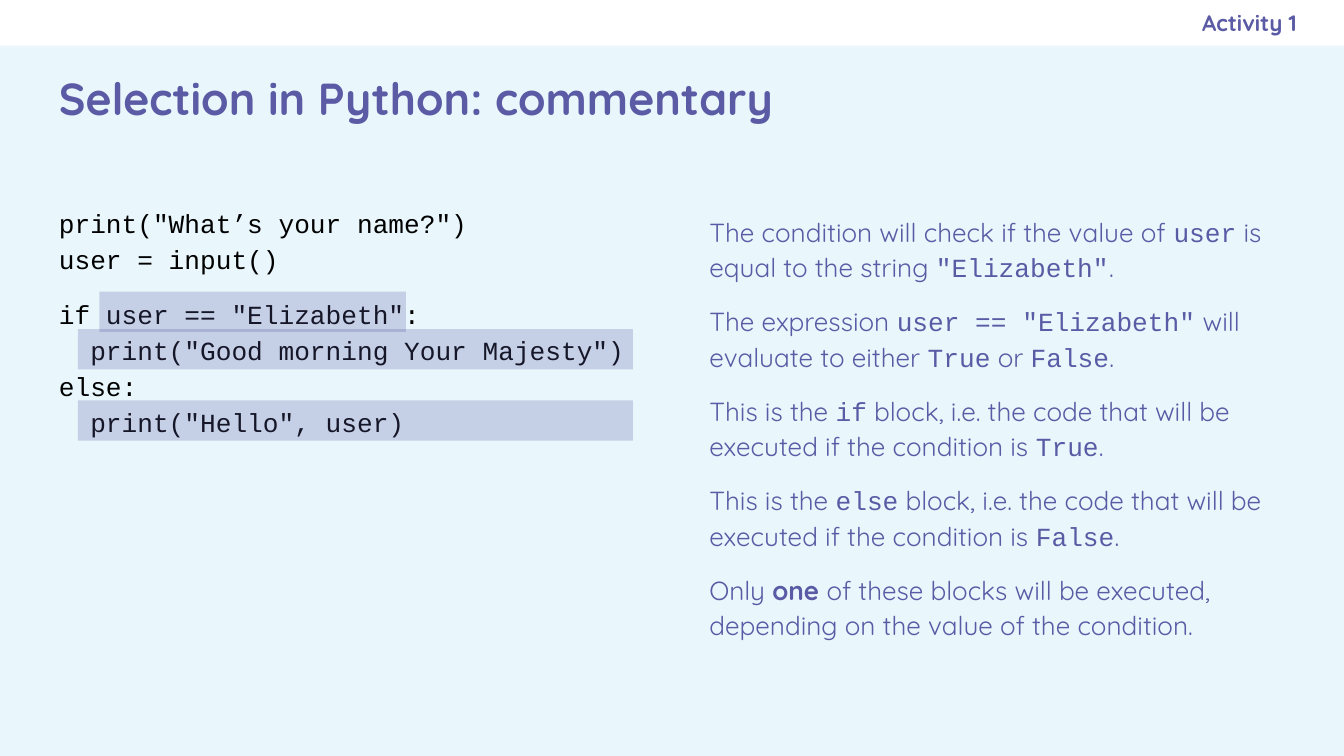
from lxml import etree
from pptx import Presentation
from pptx.dml.color import RGBColor
from pptx.enum.shapes import MSO_SHAPE
from pptx.enum.text import MSO_ANCHOR, PP_ALIGN
from pptx.oxml.ns import qn
from pptx.util import Inches, Pt

RECT = MSO_SHAPE.RECTANGLE
TOP, MIDDLE = MSO_ANCHOR.TOP, MSO_ANCHOR.MIDDLE
LEFT, RIGHT = PP_ALIGN.LEFT, PP_ALIGN.RIGHT
COLORS = {"bg": "E9F7FC", "bar": "FFFFFF", "purple": "5B5BA5", "code": "000000"}
BODY, MONO = "Quicksand", "Courier New"

PLAIN = {"name": BODY, "size": Pt(14), "bold": False}
CODE = {**PLAIN, "name": MONO}
BOLD = {**PLAIN, "bold": True}
HEADING = {**BOLD, "size": Pt(24)}
LABEL = {**BOLD, "size": Pt(12)}


def add_text(box, paragraphs, color="purple", anchor=TOP, align=LEFT, spacing=1.0, right=0.1):
    """Add a text box; each paragraph is a list of (text, font format) runs."""
    tf = s.shapes.add_textbox(*map(Inches, box)).text_frame
    frame = {"word_wrap": True, "vertical_anchor": anchor,
             "margin_left": Inches(0.1), "margin_right": Inches(right),
             "margin_top": Inches(0.1), "margin_bottom": Inches(0.1)}
    for key, value in frame.items():
        setattr(tf, key, value)
    for i, runs in enumerate(paragraphs):
        p = tf.add_paragraph() if i else tf.paragraphs[0]
        p.alignment, p.line_spacing = align, spacing
        for text, font in runs:
            r = p.add_run()
            r.text = text
            for key, value in font.items():
                setattr(r.font, key, value)
            r.font.color.rgb = RGBColor.from_string(COLORS[color])
    return tf


def add_rect(box, color, opacity=100):
    sp = s.shapes.add_shape(RECT, *map(Inches, box))
    sp.shadow.inherit = False
    sp.line.fill.background()
    sp.fill.solid()
    sp.fill.fore_color.rgb = RGBColor.from_string(COLORS[color])
    if opacity < 100:
        clr = sp.fill._xPr.find(".//" + qn("a:srgbClr"))
        etree.SubElement(clr, qn("a:alpha"), val=str(opacity * 1000))


prs = Presentation()
prs.slide_width, prs.slide_height = Inches(10), Inches(10) * 9 // 16
s = prs.slides.add_slide(prs.slide_layouts[6])
s.background.fill.solid()
s.background.fill.fore_color.rgb = RGBColor.from_string(COLORS["bg"])

# Header and title
add_rect((0, 0, 10, 0.34), "bar")
add_text((5.75, 0, 3.9, 0.34), [[("Activity 1", LABEL)]], anchor=MIDDLE, align=RIGHT, right=0)
add_text((0.34, 0.34, 9.32, 0.77), [[("Selection in Python: commentary", HEADING)]], anchor=MIDDLE)

# Program listing
code_lines = [
    'print("What’s your name?")',
    "user = input()",
    'if user == "Elizabeth":',
    '  print("Good morning Your Majesty")',
    "else:",
    '  print("Hello", user)',
]
tf = add_text((0.34, 1.41, 4.84, 2.07), [[(line, CODE)] for line in code_lines],
              color="code", spacing=1.15)
tf.paragraphs[2].space_before = Pt(10)

# Commentary, one box per remark
remarks = [
    [("The condition will check if the value of ", PLAIN), ("user", CODE),
     (" is equal to the string ", PLAIN), ('"Elizabeth"', CODE), (".", PLAIN)],
    [("The expression ", PLAIN), ('user == "Elizabeth"', CODE),
     (" will evaluate to either ", PLAIN), ("True", CODE), (" or ", PLAIN),
     ("False", CODE), (".", PLAIN)],
]
for keyword, outcome in (("if", "True"), ("else", "False")):
    remarks.append([
        ("This is the ", PLAIN), (keyword, CODE),
        (" block, i.e. the code that will be executed if the condition is ", PLAIN),
        (outcome, CODE), (".", PLAIN)])
remarks.append([
    ("Only ", PLAIN), ("one ", BOLD),
    ("of these blocks will be executed, depending on the value of the condition.", PLAIN)])
remark_pitch = 2.66 / (len(remarks) - 1)
for i, runs in enumerate(remarks):
    add_text((5.18, 1.48 + i * remark_pitch, 4.47, 0.71), [runs], spacing=1.13, right=0.06)

# Translucent highlights over the condition and the two blocks
for left, top, width in ((0.74, 2.17, 2.28), (0.58, 2.45, 4.13), (0.58, 2.98, 4.13)):
    add_rect((left, top, width, 0.3), "purple", opacity=25)

prs.save("out.pptx")
